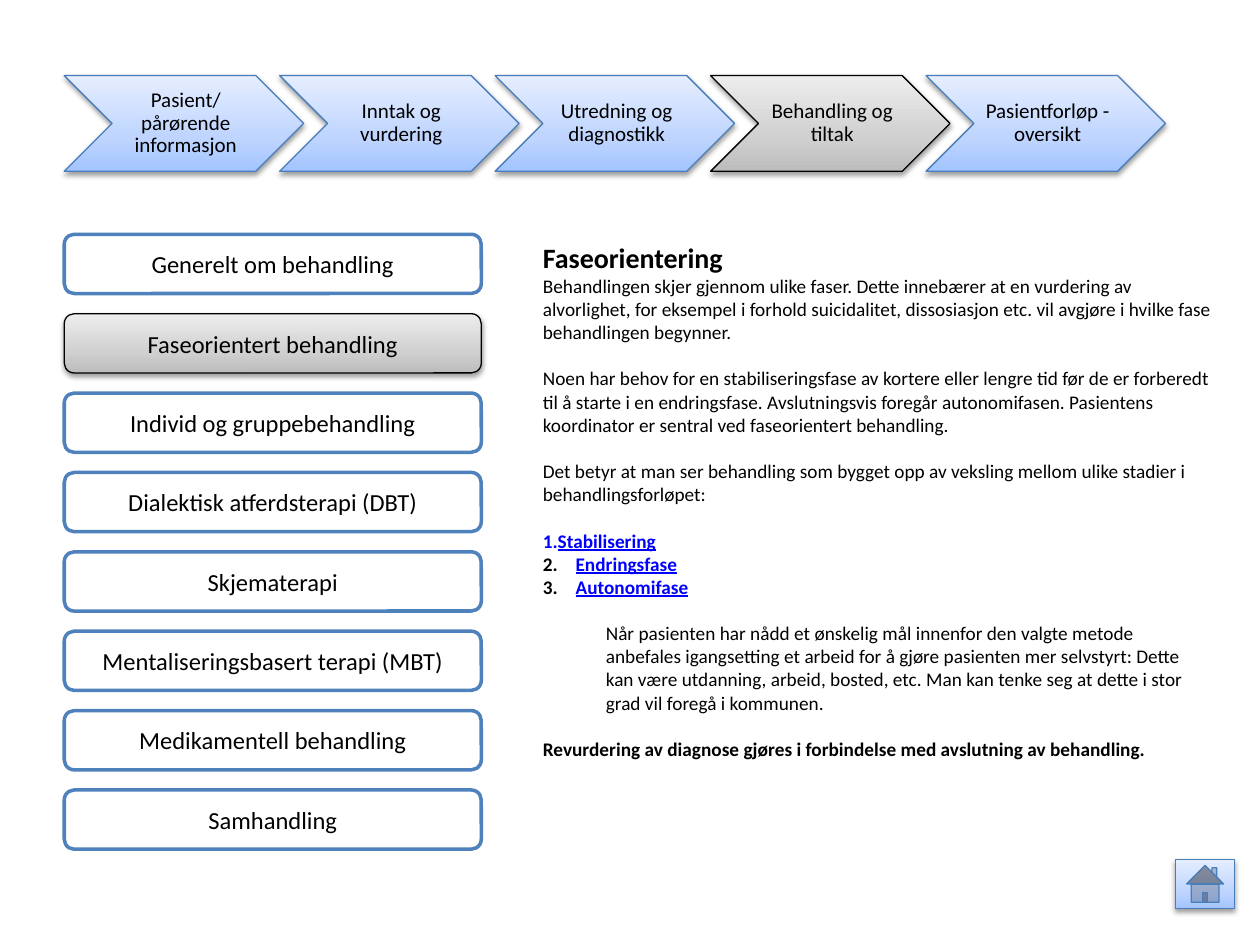
from copy import deepcopy
from dataclasses import dataclass

from lxml.etree import SubElement
from pptx import Presentation
from pptx.dml.color import RGBColor
from pptx.enum.shapes import MSO_SHAPE as Geo
from pptx.enum.text import MSO_ANCHOR as Anchor, PP_ALIGN as Align
from pptx.oxml.ns import qn
from pptx.util import Inches, Pt

FONT = "Calibri"
BLACK = "000000"
LINK = "0000FF"


@dataclass
class Look:
    fills: tuple
    line: str
    width: float


@dataclass
class Box:
    geo: Geo
    left: float
    top: float
    width: float
    height: float
    look: Look
    text: str = ""
    size: int = 14


@dataclass
class Para:
    text: str
    size: int = 11
    bold: bool = False
    gap: float = 0
    indent: float = 0


@dataclass
class Phase:
    num: int
    name: str


BLUE = Look(("A3C4FF", "BFD5FF", "E5EEFF"), "4A7EBB", 0.75)
GREY = Look(("BCBCBC", "D0D0D0", "EDEDED"), BLACK, 0.75)
PLAIN = Look(("FFFFFF",), "4F81BD", 2)

STEPS = ("Pasient/ pårørende informasjon", "Inntak og vurdering",
         "Utredning og diagnostikk", "Behandling og tiltak",
         "Pasientforløp - oversikt")
TOPICS = ("Generelt om behandling", "Faseorientert behandling",
          "Individ og gruppebehandling", "Dialektisk atferdsterapi (DBT)",
          "Skjematerapi", "Mentaliseringsbasert terapi (MBT)",
          "Medikamentell behandling", "Samhandling")
ACTIVE = ("Behandling og tiltak", "Faseorientert behandling")

GAP = 13.3
BODY = (
    Para("Faseorientering", 16, True),
    Para("Behandlingen skjer gjennom ulike faser. Dette innebærer at en "
         "vurdering av alvorlighet, for eksempel i forhold suicidalitet, "
         "dissosiasjon etc. vil avgjøre i hvilke fase behandlingen begynner."),
    Para("Noen har behov for en stabiliseringsfase av kortere eller lengre tid "
         "før de er forberedt til å starte i en endringsfase. Avslutningsvis "
         "foregår autonomifasen. Pasientens koordinator er sentral ved "
         "faseorientert behandling.", gap=GAP),
    Para("Det betyr at man ser behandling som bygget opp av veksling mellom "
         "ulike stadier i behandlingsforløpet:", gap=GAP),
    Phase(1, "Stabilisering"),
    Phase(2, "Endringsfase"),
    Phase(3, "Autonomifase"),
    Para("Når pasienten har nådd et ønskelig mål innenfor den valgte metode "
         "anbefales igangsetting et arbeid for å gjøre pasienten mer selvstyrt: "
         "Dette kan være utdanning, arbeid, bosted, etc. Man kan tenke seg at "
         "dette i stor grad vil foregå i kommunen.", gap=GAP, indent=0.5),
    Para("Revurdering av diagnose gjøres i forbindelse med avslutning av "
         "behandling.", bold=True, gap=GAP),
)


def paint(color, code: str) -> None:
    """Set a colour format from a hex string."""
    color.rgb = RGBColor.from_string(code)


def style(font, size: float, bold: bool = False, code: str = BLACK) -> None:
    """Set face, size, weight and colour."""
    font.name, font.size, font.bold = FONT, Pt(size), bold
    paint(font.color, code)


def blend(shape, fills: tuple) -> None:
    """Fill a shape with a three-stop upward gradient and a soft shadow."""
    shape.fill.gradient()
    shape.fill.gradient_angle = 90
    props = shape.element.spPr
    stops = props.find(qn("a:gradFill")).find(qn("a:gsLst"))
    stops.append(deepcopy(stops[0]))
    for stop, pos, code in zip(shape.fill.gradient_stops, (0, 0.35, 1), fills):
        stop.position = pos
        paint(stop.color, code)
    shade = SubElement(props.find(qn("a:effectLst")), qn("a:outerShdw"),
                       blurRad=str(Pt(3.1)), dist=str(Pt(1.6)),
                       dir="5400000", rotWithShape="0")
    tint = SubElement(shade, qn("a:srgbClr"), val=BLACK)
    SubElement(tint, qn("a:alpha"), val="38000")


def draw(slide, box: Box) -> None:
    """Draw one box with its label."""
    shape = slide.shapes.add_shape(
        box.geo, Inches(box.left), Inches(box.top),
        Inches(box.width), Inches(box.height))
    shape.shadow.inherit = False
    paint(shape.line.color, box.look.line)
    shape.line.width = Pt(box.look.width)
    if len(box.look.fills) > 1:
        blend(shape, box.look.fills)
    else:
        shape.fill.solid()
        paint(shape.fill.fore_color, box.look.fills[0])
    if not box.text:
        return
    frame = shape.text_frame
    frame.word_wrap = True
    frame.vertical_anchor = Anchor.MIDDLE
    para = frame.paragraphs[0]
    para.text = box.text
    para.alignment = Align.CENTER
    style(para.font, box.size)
    if box.geo == Geo.CHEVRON:
        frame.margin_left = Inches(0.05)
        frame.margin_right = frame.margin_top = frame.margin_bottom = Inches(0.02)
        para.line_spacing = 0.9


def phase(para, item: Phase) -> None:
    """Write one numbered phase link."""
    first = item.num == 1
    props = para._p.get_or_add_pPr()
    if first:
        para.space_before = Pt(GAP)
        SubElement(props, qn("a:buFont"), typeface="+mj-lt")
        SubElement(props, qn("a:buAutoNum"), type="arabicPeriod")
    else:
        tabs = SubElement(props, qn("a:tabLst"))
        SubElement(tabs, qn("a:tab"), pos=str(Inches(0.26)), algn="l")
        style(para.add_run().font, 11, True)
        para.runs[0].text = f"{item.num}.\t"
    run = para.add_run()
    run.text = item.name
    style(run.font, 11, True, LINK)
    run.font.underline = True


def write(slide) -> None:
    """Write the body text."""
    frame = slide.shapes.add_textbox(
        Inches(4.21), Inches(1.86), Inches(5.51), Inches(5.64)).text_frame
    frame.word_wrap = True
    for i, item in enumerate(BODY):
        para = frame.add_paragraph() if i else frame.paragraphs[0]
        if isinstance(item, Phase):
            phase(para, item)
            continue
        para.text = item.text
        if item.gap:
            para.space_before = Pt(item.gap)
        if item.indent:
            para.level = 1
            para._p.get_or_add_pPr().set("marL", str(Inches(item.indent)))
        style(para.font, item.size, item.bold)


def main() -> None:
    """Build the slide."""
    deck = Presentation()
    deck.slide_width, deck.slide_height = Inches(10), Inches(7.5)
    slide = deck.slides.add_slide(deck.slide_layouts[6])
    write(slide)
    for i, text in enumerate(STEPS):
        look = GREY if text in ACTIVE else BLUE
        draw(slide, Box(Geo.CHEVRON, 0.51 + 1.71 * i, 0.6, 1.9, 0.76,
                        look, text, 12))
    for i, text in enumerate(TOPICS):
        look = GREY if text in ACTIVE else PLAIN
        draw(slide, Box(Geo.ROUNDED_RECTANGLE, 0.51, 1.86 + 0.63 * i,
                        3.31, 0.47, look, text))
    draw(slide, Box(Geo.ACTION_BUTTON_HOME, 9.33, 6.82, 0.47, 0.39, BLUE))
    deck.save("out.pptx")


if __name__ == "__main__":
    main()
